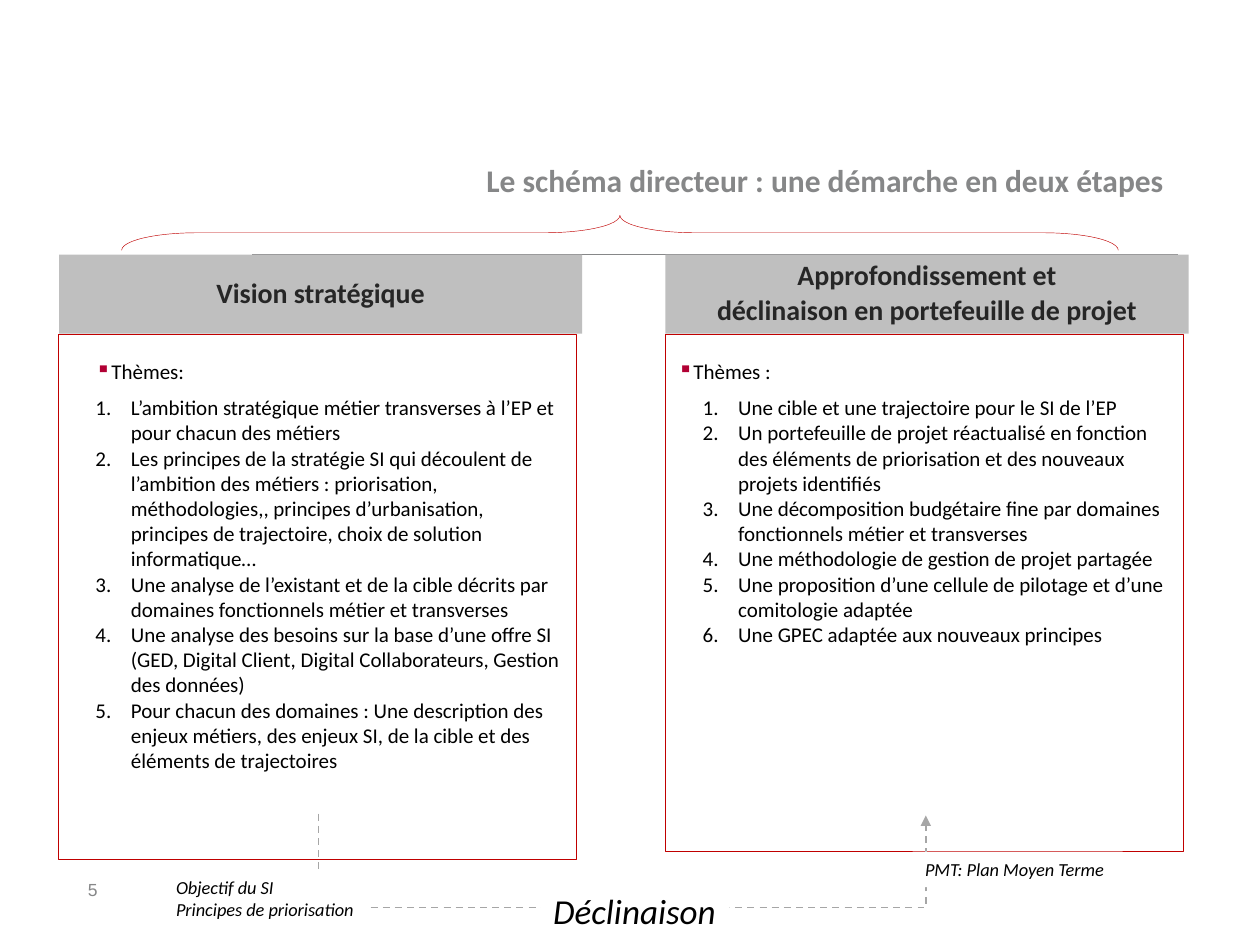
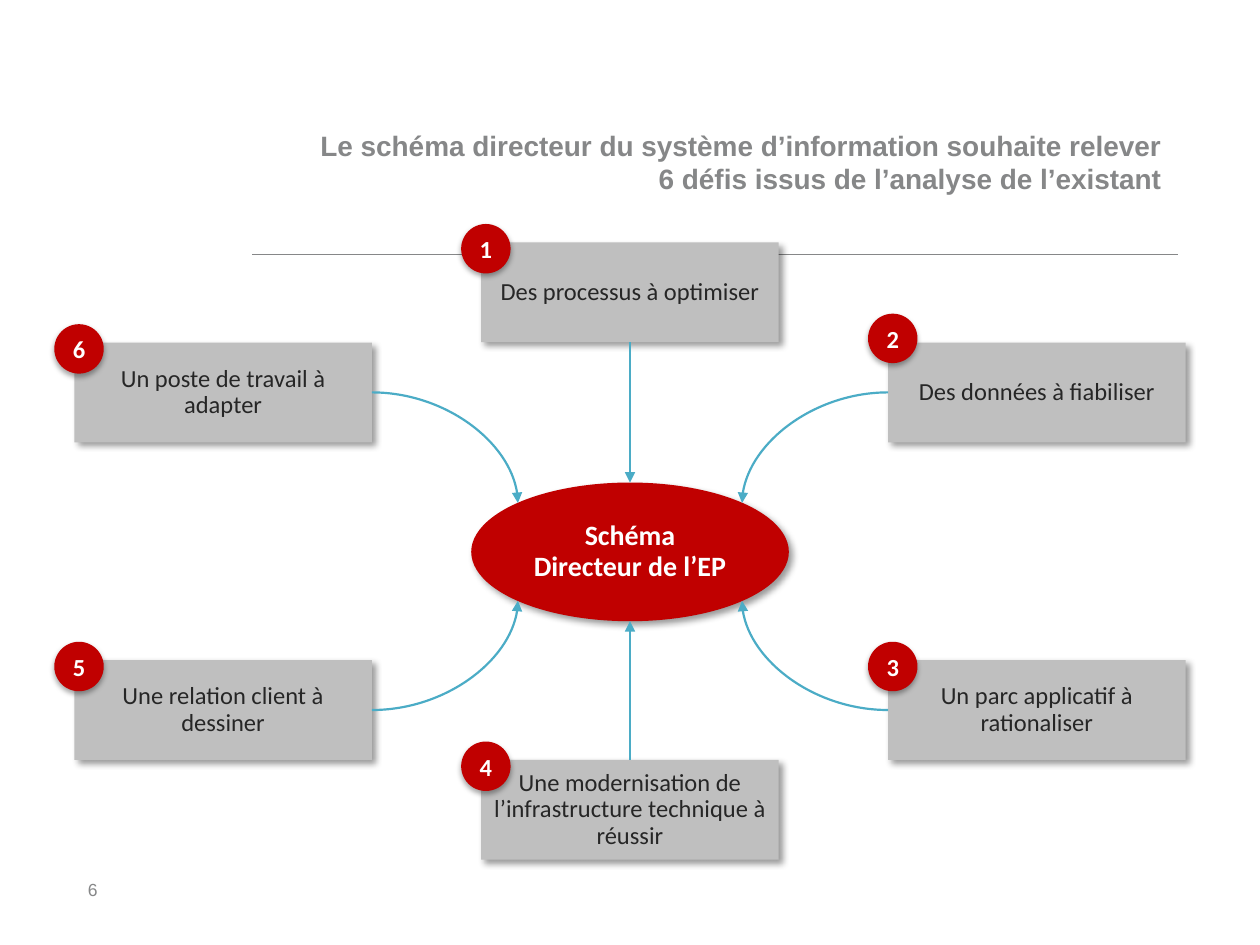
from lxml import etree
from pptx import Presentation
from pptx.dml.color import RGBColor
from pptx.enum import dml, shapes, text
from pptx.oxml import ns
from pptx.util import Pt

# Shared look
RED = RGBColor(0xC0, 0x00, 0x00)
CRIMSON = RGBColor(0xB1, 0x00, 0x34)
TEAL = RGBColor(0x4B, 0xAC, 0xC6)
WHITE = RGBColor(0xFF, 0xFF, 0xFF)
BLACK = RGBColor(0x00, 0x00, 0x00)
INK = RGBColor(0x26, 0x26, 0x26)
SILVER = RGBColor(0xBF, 0xBF, 0xBF)
DASH_GREY = RGBColor(0xA6, 0xA6, 0xA6)
GREY = RGBColor(0x86, 0x87, 0x88)

RECT, OVAL = shapes.MSO_SHAPE.RECTANGLE, shapes.MSO_SHAPE.OVAL
LEFT, CENTER, RIGHT, JUSTIFY = (text.PP_ALIGN.LEFT, text.PP_ALIGN.CENTER,
                                text.PP_ALIGN.RIGHT, text.PP_ALIGN.JUSTIFY)
TOP, MIDDLE = text.MSO_ANCHOR.TOP, text.MSO_ANCHOR.MIDDLE
DEFAULT_INSETS = (7.2, 3.6, 7.2, 3.6)
TIGHT_INSETS = (3, 3.6, 3, 3.6)
PANEL_INSETS = (7.2, 14.4, 7.2, 7.2)

TITLE = {"size": Pt(18), "name": "Calibri", "bold": True, "color": GREY}
TITLE_ARIAL = {**TITLE, "size": Pt(16), "name": "Arial"}
NUMBER = {"size": Pt(10), "name": "Arial", "color": GREY}
HEADER = {"size": Pt(16), "name": "Calibri", "bold": True, "color": INK}
BODY = {"size": Pt(12), "name": "Calibri", "color": BLACK}
NOTE = {"size": Pt(10.5), "name": "Calibri", "italic": True, "color": BLACK}
LINK_WORD = {**NOTE, "size": Pt(20)}
HUB = {**HEADER, "color": WHITE}
CHALLENGE = {"size": Pt(14), "name": "Calibri", "color": INK}
BADGE = {**CHALLENGE, "bold": True, "color": WHITE}

# Shadows: blur, distance, angle, opacity in percent
SOFT_SHADOW = (4, 3, 45, 40)
BADGE_SHADOW = (3.1, 1.8, 90, 35)

# Content of the two-step slide
STEPS = [
    {"header": ["Vision stratégique"], "header_left": 33.75, "left": 33.25,
     "height": 300, "heading": "Thèmes:", "heading_indent": 14.4,
     "themes": [
         "L’ambition stratégique métier transverses à l’EP et pour chacun des métiers",
         "Les principes de la stratégie SI qui découlent de l’ambition des métiers : "
         "priorisation, méthodologies,, principes d’urbanisation, principes de "
         "trajectoire, choix de solution informatique…",
         "Une analyse de l’existant et de la cible décrits par domaines fonctionnels "
         "métier et transverses",
         "Une analyse des besoins sur la base d’une offre SI (GED, Digital Client, "
         "Digital Collaborateurs, Gestion des données)",
         "Pour chacun des domaines : Une description des enjeux métiers, des enjeux SI, "
         "de la cible et des éléments de trajectoires"]},
    {"header": ["Approfondissement et", "déclinaison en portefeuille de projet"],
     "header_left": 380.25, "left": 380.25,
     "height": 295.75, "heading": "Thèmes :", "heading_indent": -14.4,
     "themes": [
         "Une cible et une trajectoire pour le SI de l’EP",
         "Un portefeuille de projet réactualisé en fonction des éléments de "
         "priorisation et des nouveaux projets identifiés",
         "Une décomposition budgétaire fine par domaines fonctionnels métier et "
         "transverses",
         "Une méthodologie de gestion de projet partagée",
         "Une proposition d’une cellule de pilotage et d’une comitologie adaptée",
         "Une GPEC adaptée aux nouveaux principes"]},
]
LABELS = [
    (["Déclinaison"], LINK_WORD, (309, 504.75, 108, 31.5)),
    (["Objectif du SI", "Principes de priorisation"], NOTE, (93.5, 497, 117.5, 32.5)),
    (["PMT: Plan Moyen Terme"], NOTE, (521.5, 486.75, 120, 20.25)),
]

# Content of the challenges slide: text, column, row, badge rise
CHALLENGES = [
    ("Des processus à optimiser", 1, 0, 10.5),
    ("Des données à fiabiliser", 2, 1, 16.5),
    ("Un parc applicatif à rationaliser", 2, 2, 10.5),
    ("Une modernisation de l’infrastructure technique à réussir", 1, 3, 10.5),
    ("Une relation client à dessiner", 0, 2, 10.5),
    ("Un poste de travail à adapter", 0, 1, 10.5),
]
ROW_TOPS = (138.5, 195.75, 377.25, 434.25)
BOX_WIDTH, BOX_HEIGHT, BOX_LEFT, COLUMN_STEP = 170, 57, 42.5, 232.5
HUB_BOX = (269.25, 275.75, 181.5, 79.25)
BADGE_SIZE, BADGE_SHIFT = 28.25, 11.5


def add_xml(parent, tag, **values):
    child = etree.SubElement(parent, ns.qn(tag))
    for key, value in values.items():
        child.set(key, str(value))
    return child


def set_font(font, style):
    for key, value in style.items():
        if key == "color":
            font.color.rgb = value
        else:
            setattr(font, key, value)


def write(frame, lines, style, align=LEFT, anchor=TOP, insets=DEFAULT_INSETS,
          wrap=True, **spacing):
    sides = ("margin_left", "margin_top", "margin_right", "margin_bottom")
    settings = dict(zip(sides, map(Pt, insets)), word_wrap=wrap,
                    vertical_anchor=anchor, auto_size=text.MSO_AUTO_SIZE.NONE)
    for key, value in settings.items():
        setattr(frame, key, value)
    for index, line in enumerate(lines):
        para = frame.add_paragraph() if index else frame.paragraphs[0]
        for key, value in {"alignment": align, **spacing}.items():
            setattr(para, key, value)
        span = para.add_run()
        span.text = line
        set_font(span.font, style)


def add_block(page, kind, place, fill, line=None, shadow=None):
    block = page.shapes.add_shape(kind, *map(Pt, place))
    block.fill.solid()
    block.fill.fore_color.rgb = fill
    if line is None:
        block.line.fill.background()
    else:
        block.line.color.rgb = line
        block.line.width = Pt(0.25)
    block.shadow.inherit = False
    if shadow:
        blur, distance, angle, opacity = shadow
        effects = block.element.spPr.find(ns.qn("a:effectLst"))
        outer = add_xml(effects, "a:outerShdw", blurRad=Pt(blur), dist=Pt(distance),
                        dir=angle * 60000, algn="ctr", rotWithShape=0)
        color = add_xml(outer, "a:srgbClr", val="000000")
        add_xml(color, "a:alpha", val=opacity * 1000)
    return block


def add_line(page, kind, ends, color, width, arrow=False):
    line = page.shapes.add_connector(kind, *map(Pt, ends))
    line.line.color.rgb = color
    line.line.width = Pt(width)
    add_xml(line.element.spPr, "a:effectLst")
    if arrow:
        add_xml(line.line._get_or_add_ln(), "a:tailEnd", type="triangle")
    return line


def add_page(deck, number, title, style, place):
    page = deck.slides.add_slide(deck.slide_layouts[5])
    heading = page.shapes.title
    heading.left, heading.top, heading.width, heading.height = map(Pt, place)
    write(heading.text_frame, [title], style, RIGHT)
    add_line(page, shapes.MSO_CONNECTOR.STRAIGHT, (144, 145.5, 673.25, 145.5), GREY, 0.75)
    box = page.shapes.add_textbox(Pt(50.25), Pt(502.5), Pt(28), Pt(11.5))
    write(box.text_frame, [str(number)], NUMBER, insets=(0, 0, 0, 0))
    return page


def set_bullet(para, left, indent, mark=None):
    props = para._p.get_or_add_pPr()
    props.set("marL", str(Pt(left)))
    props.set("indent", str(Pt(indent)))
    if mark:
        color = add_xml(props, "a:buClr")
        add_xml(color, "a:srgbClr", val=CRIMSON)
        add_xml(props, "a:buChar", char=mark)
    else:
        add_xml(props, "a:buFont", typeface="+mj-lt")
        add_xml(props, "a:buAutoNum", type="arabicPeriod")


def add_step(page, step):
    # Framed panel with its numbered themes
    panel = add_block(page, RECT, (step["left"], 190.75, 296, step["height"]), WHITE, RED)
    frame = panel.text_frame
    write(frame, [step["heading"], *step["themes"]], BODY, insets=PANEL_INSETS)
    heading, *themes = frame.paragraphs
    heading.alignment = JUSTIFY
    heading.space_after = Pt(6)
    set_bullet(heading, 0, step["heading_indent"], "▪")
    for para in themes:
        para.level = 1
        set_bullet(para, 34.5, -20.25)
    # Header band
    band = add_block(page, RECT, (step["header_left"], 145.5, 299, 45.25), SILVER)
    write(band.text_frame, step["header"], HEADER, CENTER, MIDDLE, TIGHT_INSETS,
          line_spacing=0.9, space_after=Pt(3))


def build_steps(deck):
    page = add_page(deck, 5, "Le schéma directeur : une démarche en deux étapes",
                    TITLE, (201.5, 88.5, 471, 26.75))
    for step in STEPS:
        add_step(page, step)

    # Brace over both steps
    brace = add_block(page, shapes.MSO_SHAPE.RIGHT_BRACE,
                      (344.25, -151.75, 20, 569.5), WHITE, RED)
    brace.rotation = 270
    brace.adjustments[0] = 2.16

    # Dashed path running 54 points below the panels' ends
    path = add_line(page, shapes.MSO_CONNECTOR.ELBOW, (355, 292, 356, 639),
                    DASH_GREY, 1, arrow=True)
    path.line.dash_style = dml.MSO_LINE.DASH
    frame = path.element.spPr.find(ns.qn("a:xfrm"))
    frame.set("rot", str(270 * 60000))
    frame.set("flipH", "1")
    guides = path.element.spPr.find(ns.qn("a:prstGeom")).get_or_add_avLst()
    add_xml(guides, "a:gd", name="adj1", fmla="val 5400000")

    for lines, style, place in LABELS:
        label = add_block(page, RECT, place, WHITE)
        write(label.text_frame, lines, style, wrap=False)


def build_challenges(deck):
    page = add_page(deck, 6, "Le schéma directeur du système d’information souhaite relever "
                    "6 défis issus de l’analyse de l’existant",
                    TITLE_ARIAL, (172.75, 69.75, 498.25, 46))
    hub = add_block(page, OVAL, HUB_BOX, RED, shadow=SOFT_SHADOW)
    write(hub.text_frame, ["Schéma Directeur de l’EP"], HUB, CENTER, MIDDLE,
          line_spacing=0.9)
    hub_left, hub_top, hub_width, hub_height = HUB_BOX
    center_x, center_y = hub_left + hub_width / 2, hub_top + hub_height / 2

    # Challenge boxes around the hub
    boxes = []
    for label, column, row, _ in CHALLENGES:
        place = (BOX_LEFT + column * COLUMN_STEP, ROW_TOPS[row], BOX_WIDTH, BOX_HEIGHT)
        box = add_block(page, RECT, place, SILVER, shadow=SOFT_SHADOW)
        write(box.text_frame, [label], CHALLENGE, CENTER, MIDDLE, line_spacing=0.9)
        boxes.append((box, place))

    # Arrows to the hub: straight in the middle column, curved at the sides
    for (box, (left, top, width, height)), (_, column, row, _) in zip(boxes, CHALLENGES):
        above = row < 2
        if column == 1:
            start_y = top + height if above else top
            end_y = hub_top if above else hub_top + hub_height
            arrow = add_line(page, shapes.MSO_CONNECTOR.STRAIGHT,
                             (center_x, start_y, center_x, end_y), TEAL, 1.25, True)
            arrow.begin_connect(box, 2 if above else 0)
        else:
            side = column - 1
            start_x = left if side > 0 else left + width
            ends = (start_x, top + height / 2, center_x + side * hub_width * 0.353,
                    center_y + (-1 if above else 1) * hub_height * 0.353)
            arrow = add_line(page, shapes.MSO_CONNECTOR.CURVE, ends, TEAL, 1.25, True)
            arrow.element.spPr.find(ns.qn("a:prstGeom")).set("prst", "curvedConnector2")

    # Numbered badges on the top-left corners
    for number, ((_, place), challenge) in enumerate(zip(boxes, CHALLENGES), 1):
        spot = (place[0] - BADGE_SHIFT, place[1] - challenge[3], BADGE_SIZE, BADGE_SIZE)
        badge = add_block(page, OVAL, spot, RED, shadow=BADGE_SHADOW)
        write(badge.text_frame, [str(number)], BADGE, CENTER, MIDDLE, TIGHT_INSETS)


def main():
    deck = Presentation()
    deck.slide_width, deck.slide_height = Pt(720), Pt(540)
    build_steps(deck)
    build_challenges(deck)
    deck.save("out.pptx")


if __name__ == "__main__":
    main()
